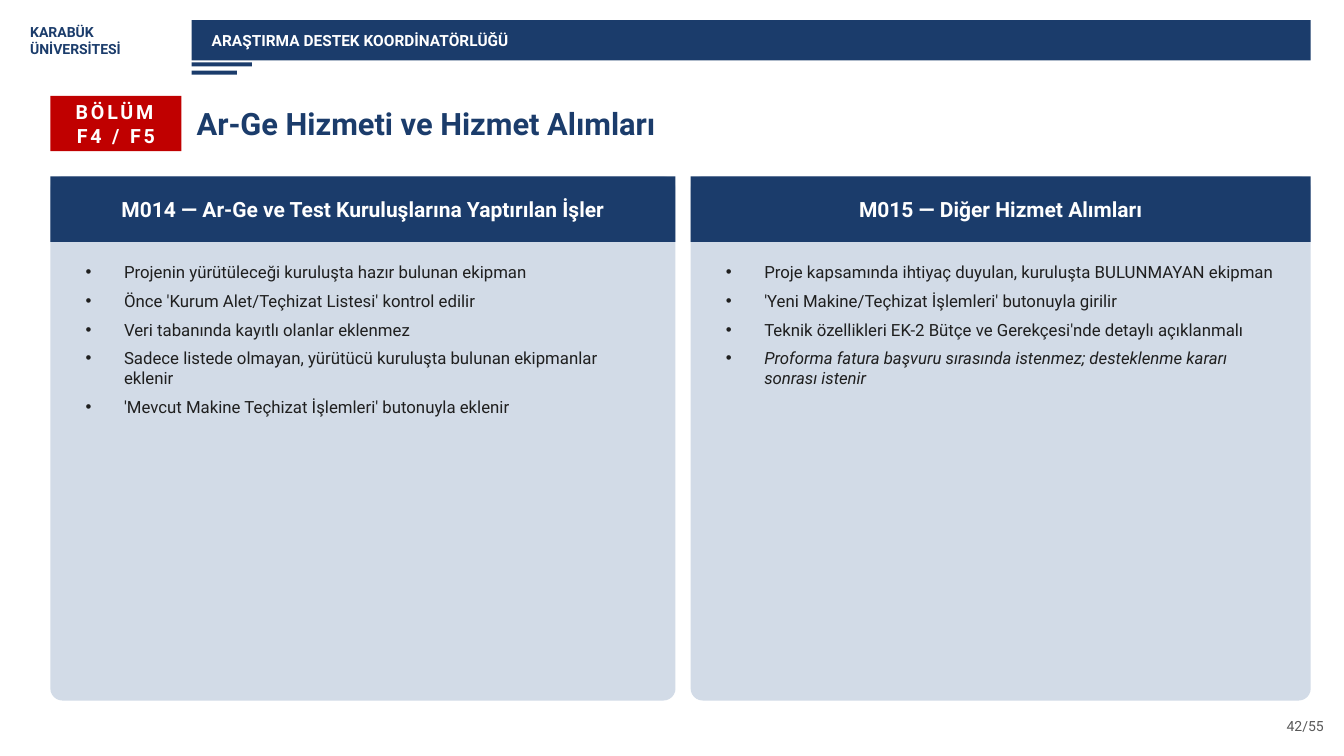
from dataclasses import dataclass
from lxml.etree import SubElement
from pptx import Presentation
from pptx.dml.color import RGBColor
from pptx.enum.shapes import MSO_SHAPE
from pptx.enum.text import MSO_ANCHOR, MSO_AUTO_SIZE, PP_ALIGN
from pptx.oxml.ns import qn
from pptx.util import Inches, Pt

SCHOOL = ["KARABÜK", "ÜNİVERSİTESİ"]
OFFICE = ["ARAŞTIRMA DESTEK KOORDİNATÖRLÜĞÜ"]
BADGE = ["BÖLÜM F4 / F5"]
TITLE = ["Ar-Ge Hizmeti ve Hizmet Alımları"]
PAGE = ["42/55"]
PANELS = [
    {
        "head": "M014 — Ar-Ge ve Test Kuruluşlarına Yaptırılan İşler",
        "list": [
            "Projenin yürütüleceği kuruluşta hazır bulunan ekipman",
            "Önce 'Kurum Alet/Teçhizat Listesi' kontrol edilir",
            "Veri tabanında kayıtlı olanlar eklenmez",
            "Sadece listede olmayan, yürütücü kuruluşta bulunan ekipmanlar eklenir",
            "'Mevcut Makine Teçhizat İşlemleri' butonuyla eklenir",
        ],
        "slant": [],
        "cols": 124,
    },
    {
        "head": "M015 — Diğer Hizmet Alımları",
        "list": [
            "Proje kapsamında ihtiyaç duyulan, kuruluşta BULUNMAYAN ekipman",
            "'Yeni Makine/Teçhizat İşlemleri' butonuyla girilir",
            "Teknik özellikleri EK-2 Bütçe ve Gerekçesi'nde detaylı açıklanmalı",
            "Proforma fatura başvuru sırasında istenmez; desteklenme kararı sonrası istenir",
        ],
        "slant": [3],
        "cols": 123,
    },
]


@dataclass(frozen=True)
class Theme:
    font: str = "Roboto"
    navy: str = "1B3C6B"
    red: str = "C00000"
    pale: str = "D2DBE7"
    white: str = "FFFFFF"
    ink: str = "1F1F1F"
    gray: str = "595959"
    small: int = 10
    bar: int = 11
    body: int = 12
    badge: int = 14
    head: int = 15
    title: int = 22


T = Theme()
WIDE, HIGH = 13.33, 7.5
CELL = 0.05
LEFT, GAP = 10, 3
TOP, TALL, HEAD = 35, 104, 13
INSET = 5
HANG = Inches(0.38)

deck = Presentation()
deck.slide_width, deck.slide_height = Inches(WIDE), Inches(HIGH)
slide = deck.slides.add_slide(deck.slide_layouts[3])
shapes = slide.shapes


def grid(*cells):
    return [Inches(round(n * CELL, 2)) for n in cells]


def block(box, fill, kind=MSO_SHAPE.RECTANGLE):
    item = shapes.add_shape(kind, *grid(*box))
    item.shadow.inherit = False
    item.fill.solid()
    item.fill.fore_color.rgb = RGBColor.from_string(fill)
    item.line.fill.background()
    return item


def label(box):
    return shapes.add_textbox(*grid(*box))


def place(item, box):
    item.left, item.top, item.width, item.height = grid(*box)
    item.element.getparent().append(item.element)
    return item


def write(item, lines, size, color, bold=False, slant=(), align=PP_ALIGN.LEFT,
          anchor=MSO_ANCHOR.MIDDLE, pad=(0, 0, 0, 0), after=0, dot=None, track=0):
    frame = item.text_frame
    frame.word_wrap = True
    frame.auto_size = MSO_AUTO_SIZE.NONE
    frame.vertical_anchor = anchor
    (frame.margin_left, frame.margin_top,
     frame.margin_right, frame.margin_bottom) = grid(*pad)
    for i, line in enumerate(lines):
        para = frame.add_paragraph() if i else frame.paragraphs[0]
        para.alignment = align
        para.space_before = Pt(0)
        para.space_after = Pt(after if i < len(lines) - 1 else 0)
        if dot:
            props = para._p.get_or_add_pPr()
            props.set("marL", str(HANG))
            props.set("indent", str(-HANG))
            SubElement(props, qn("a:buChar"), char=dot)
        run = para.add_run()
        run.text = line
        font = run.font
        font.name, font.size = T.font, Pt(size)
        font.bold, font.italic = bold, i in slant
        font.color.rgb = RGBColor.from_string(color)
        if track:
            run._r.get_or_add_rPr().set("spc", str(track * 100))


def panel(data, hold, left):
    cols = data["cols"]
    card = block((left, TOP, cols, TALL), T.pale, MSO_SHAPE.ROUNDED_RECTANGLE)
    card.adjustments[0] = 0.023
    head = block((left, TOP, cols, HEAD), T.navy)
    write(head, [data["head"]], T.head, T.white, bold=True, align=PP_ALIGN.CENTER)
    body = place(hold, (left + INSET, TOP + HEAD + 3, cols - 2 * INSET, 86))
    write(body, data["list"], T.body, T.ink, slant=data["slant"],
          anchor=MSO_ANCHOR.TOP, pad=(2, 1, 2, 1), after=6, dot="•")


def main():
    write(label((6, 3, 30, 10)), SCHOOL, T.small, T.navy, bold=True)
    write(block((38, 4, 222, 8), T.navy), OFFICE, T.bar, T.white,
          bold=True, pad=(4, 0, 0, 0))
    for row, cols in ((12.4, 12), (14, 9)):
        block((38, row, cols, 0.8), T.navy)
    write(label((WIDE / CELL - 24, 141, 20, 6)), PAGE, T.small, T.gray,
          align=PP_ALIGN.RIGHT)
    write(block((LEFT, 19, 26, 11), T.red), BADGE, T.badge, T.white,
          bold=True, align=PP_ALIGN.CENTER, track=2)
    write(place(shapes.title, (39, 19, 218, 11)), TITLE, T.title, T.navy, bold=True)
    left = LEFT
    holds = list(slide.placeholders)
    bodies = [h for h in holds if h.placeholder_format.idx in (1, 2)]
    for data, hold in zip(PANELS, bodies):
        panel(data, hold, left)
        left += data["cols"] + GAP
    deck.save("out.pptx")


if __name__ == "__main__":
    main()
